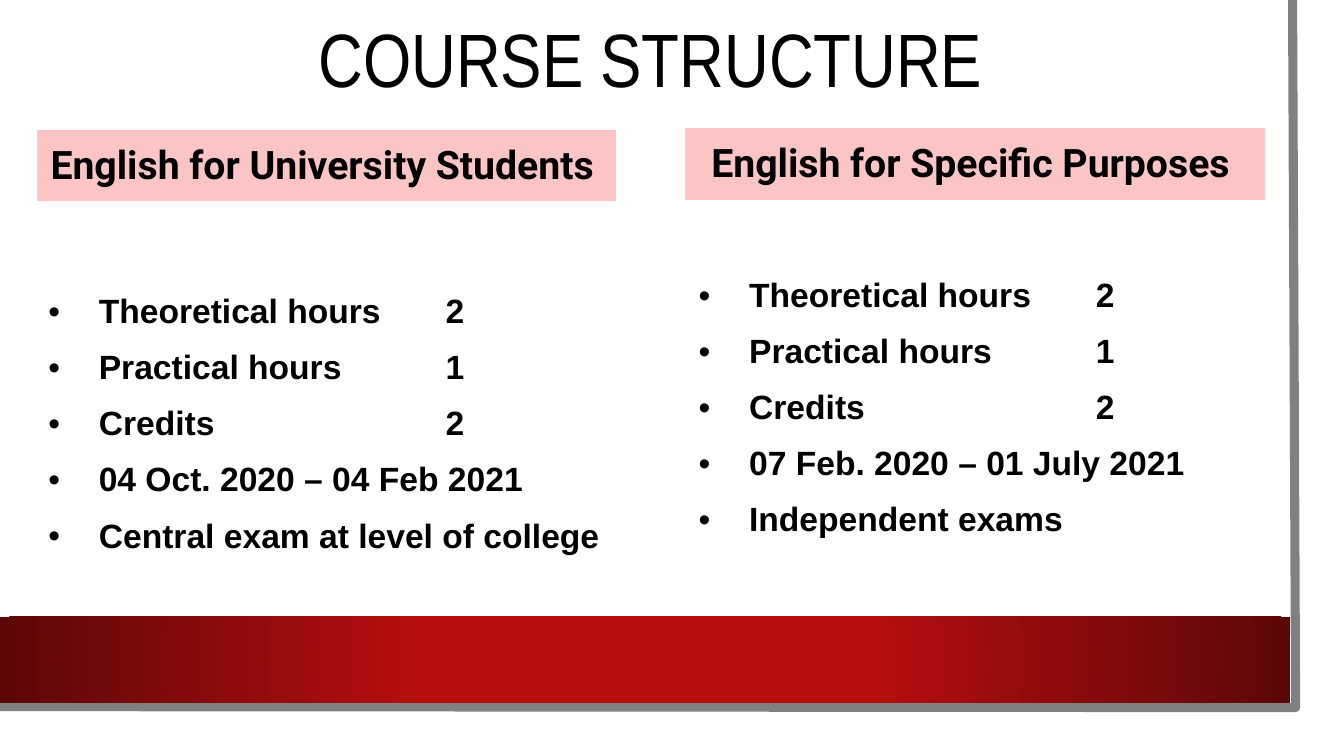
from pptx import Presentation
from pptx.dml.color import RGBColor
from pptx.enum.shapes import MSO_SHAPE
from pptx.enum.text import MSO_ANCHOR, PP_ALIGN
from pptx.oxml import parse_xml
from pptx.oxml.ns import nsdecls
from pptx.util import Inches, Pt

COLORS = {
    "text": "000000",
    "heading": "FBC5C5",
    "white": "FFFFFF",
    "frame": "808080",
    "band": "B80E0F",
    "band_edge": "5C0707",
}
TITLE_FONT = {"name": "Arial Narrow", "size": Pt(54), "bold": False}
HEADING_FONT = {"name": "Roboto", "size": Pt(28), "bold": True}
LIST_FONT = {"name": "Arial", "size": Pt(24), "bold": True}
BORDERS = {"lnL": 1, "lnR": 1, "lnT": 1, "lnB": 3}
HOURS_TAB = Inches(3.94)

# Heading box, list box, space above the list, heading text, list lines
COURSES = [
    ((0.36, 1.28, 5.76, 0.73), (0.38, 2.11, 5.72, 3.84), 0.61,
     "English for University Students",
     ["Theoretical hours\t2", "Practical hours\t1", "Credits\t2",
      "04 Oct. 2020 – 04 Feb 2021", "Central exam at level of college"]),
    ((6.79, 1.26, 5.76, 0.74), (6.83, 2.11, 5.72, 3.84), 0.45,
     "English for Specific Purposes",
     ["Theoretical hours\t2", "Practical hours\t1", "Credits\t2",
      "07 Feb. 2020 – 01 July 2021", "Independent exams"]),
]


def rgb(name):
    return RGBColor.from_string(COLORS[name])


def add_run(paragraph, text, font_format):
    run = paragraph.add_run()
    run.text = text
    for attribute, value in font_format.items():
        setattr(run.font, attribute, value)
    run.font.color.rgb = rgb("text")


def add_frame(slide):
    """Draw the grey edge along the right and bottom of the page."""
    builder = slide.shapes.build_freeform(Inches(12.82), 0)
    corners = [(Inches(12.85), Inches(7.02)), (Inches(-0.03), Inches(7.01))]
    builder.add_line_segments(corners, close=False)
    frame = builder.convert_to_shape()
    frame.shadow.inherit = False
    frame.fill.background()
    frame.line.color.rgb = rgb("frame")
    frame.line.width = Pt(6.5)


def add_band(slide, box):
    band = slide.shapes.add_shape(MSO_SHAPE.RECTANGLE, *map(Inches, box))
    band.shadow.inherit = False
    band.line.fill.background()
    gradient = parse_xml(
        f'<a:gradFill {nsdecls("a")} rotWithShape="1"><a:gsLst>'
        f'<a:gs pos="34000"><a:srgbClr val="{COLORS["band"]}"/></a:gs>'
        f'<a:gs pos="100000"><a:srgbClr val="{COLORS["band_edge"]}"/></a:gs>'
        '</a:gsLst><a:path path="circle">'
        '<a:fillToRect l="50000" t="50000" r="50000" b="50000"/>'
        '</a:path></a:gradFill>')
    band._element.spPr.find("{*}prstGeom").addnext(gradient)


def add_title(slide, box, text):
    title = slide.shapes.title
    title.left, title.top, title.width, title.height = map(Inches, box)
    title.text_frame.vertical_anchor = MSO_ANCHOR.MIDDLE
    paragraph = title.text_frame.paragraphs[0]
    paragraph.alignment = PP_ALIGN.CENTER
    paragraph.line_spacing = 0.9
    add_run(paragraph, text, TITLE_FONT)


def add_cell(slide, box, fill):
    """Add a table of one cell with white borders and return the cell."""
    table = slide.shapes.add_table(1, 1, *map(Inches, box)).table
    cell = table.cell(0, 0)
    properties = cell._tc.get_or_add_tcPr()
    for side, width in BORDERS.items():
        properties.append(parse_xml(
            f'<a:{side} {nsdecls("a")} w="{Pt(width)}"><a:solidFill>'
            f'<a:srgbClr val="{COLORS["white"]}"/></a:solidFill></a:{side}>'))
    cell.fill.solid()
    cell.fill.fore_color.rgb = rgb(fill)
    return cell


def add_heading(slide, box, text):
    cell = add_cell(slide, box, "heading")
    cell.vertical_anchor = MSO_ANCHOR.MIDDLE
    cell.margin_right = Inches(0.19)
    paragraph = cell.text_frame.paragraphs[0]
    paragraph.alignment = PP_ALIGN.CENTER
    add_run(paragraph, text, HEADING_FONT)


def add_list(slide, box, space_above, lines):
    cell = add_cell(slide, box, "white")
    cell.margin_top = Inches(space_above)
    frame = cell.text_frame
    for index, line in enumerate(lines):
        paragraph = frame.add_paragraph() if index else frame.paragraphs[0]
        properties = paragraph._p.get_or_add_pPr()
        properties.set("marL", str(Inches(0.5)))
        properties.set("indent", str(Inches(-0.5)))
        for element in (
                f'<a:buFont {nsdecls("a")} typeface="Arial"/>',
                f'<a:buChar {nsdecls("a")} char="•"/>',
                f'<a:tabLst {nsdecls("a")}>'
                f'<a:tab pos="{HOURS_TAB}" algn="l"/></a:tabLst>'):
            properties.append(parse_xml(element))
        paragraph.line_spacing = 1.5
        add_run(paragraph, line, LIST_FONT)


def main():
    presentation = Presentation()
    presentation.slide_width = Inches(13.33)
    presentation.slide_height = Inches(7.5)
    slide = presentation.slides.add_slide(presentation.slide_layouts[5])
    add_frame(slide)
    add_band(slide, (0, 6.12, 12.8, 0.85))
    add_title(slide, (0.77, 0, 11.37, 1.26), "COURSE STRUCTURE")
    for heading_box, list_box, space_above, heading, lines in COURSES:
        add_list(slide, list_box, space_above, lines)
        add_heading(slide, heading_box, heading)
    presentation.save("out.pptx")


if __name__ == "__main__":
    main()
